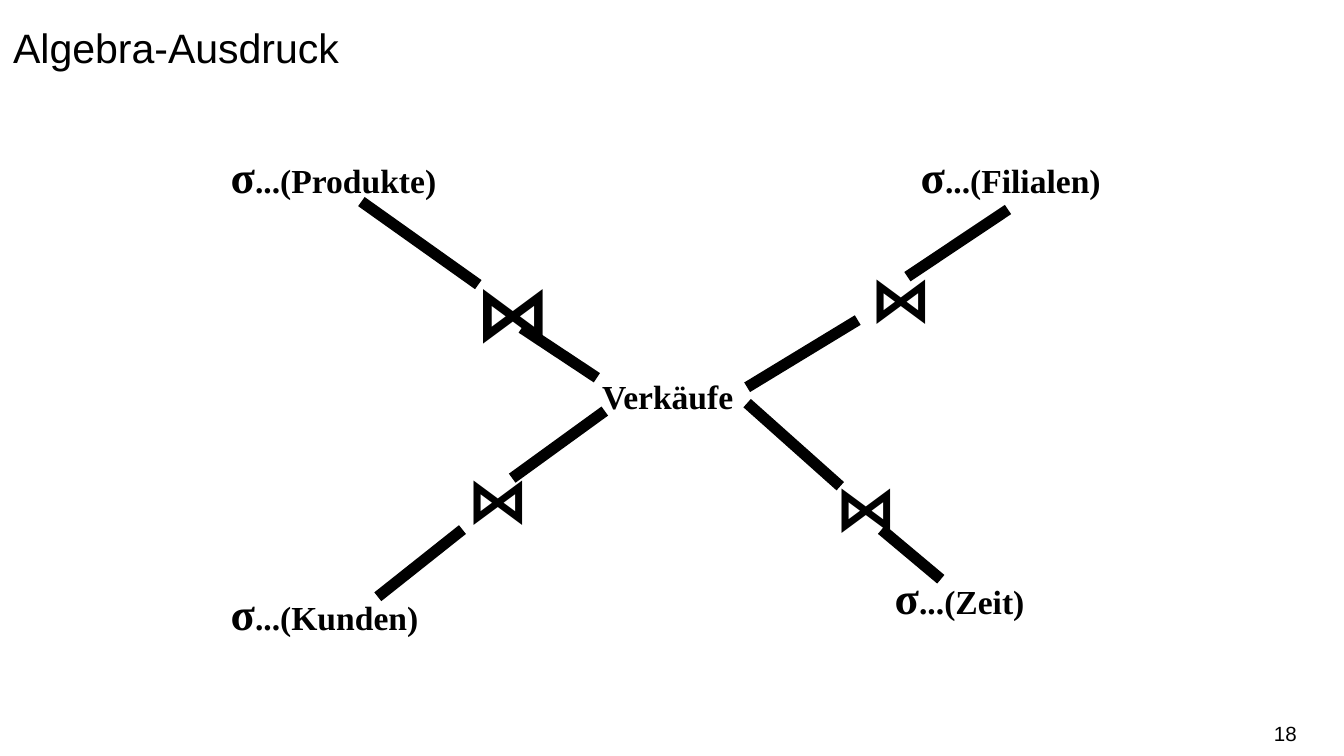
from dataclasses import dataclass

import pptx
import pptx.dml.color
import pptx.enum.shapes
import pptx.enum.text
import pptx.oxml.ns
import pptx.util
from lxml import etree
from pptx.util import Cm

INK = "000000"
SERIF = "Times New Roman"
SANS = "Arial"
ALIGN = pptx.enum.text.PP_ALIGN
ANCHOR = pptx.enum.text.MSO_ANCHOR


@dataclass
class Run:
    text: str
    size: float
    font: str = SERIF
    bold: bool = True


@dataclass
class Label:
    left: float
    top: float
    width: float
    height: float
    runs: list[Run]


@dataclass
class Edge:
    start: tuple[float, float]
    end: tuple[float, float]


def color(hex_code: str) -> pptx.dml.color.RGBColor:
    return pptx.dml.color.RGBColor.from_string(hex_code)


def draw_label(slide, label: Label, align=ALIGN.LEFT, **frame_format) -> None:
    box = slide.shapes.add_textbox(
        Cm(label.left), Cm(label.top), Cm(label.width), Cm(label.height)
    )
    frame = box.text_frame
    for name, value in {"word_wrap": True, **frame_format}.items():
        setattr(frame, name, value)
    paragraph = frame.paragraphs[0]
    paragraph.alignment = align
    for part in label.runs:
        run = paragraph.add_run()
        run.text = part.text
        font_format = {
            "name": part.font,
            "size": pptx.util.Pt(part.size),
            "bold": part.bold,
        }
        for name, value in font_format.items():
            setattr(run.font, name, value)
        run.font.color.rgb = color(INK)


def draw_edge(slide, edge: Edge) -> None:
    line = slide.shapes.add_connector(
        pptx.enum.shapes.MSO_CONNECTOR.STRAIGHT,
        *map(Cm, edge.start),
        *map(Cm, edge.end),
    )
    line.line.color.rgb = color(INK)
    line.line.width = pptx.util.Pt(6)
    etree.SubElement(line._element.spPr, pptx.oxml.ns.qn("a:effectLst"))


def selection(left: float, top: float, width: float, relation: str) -> Label:
    runs = [Run("σ", 24), Run(f"...({relation})", 18)]
    return Label(left, top, width, 1.27, runs)


def join(left: float, top: float, width: float, height: float, size: float) -> Label:
    return Label(left, top, width, height, [Run("⋈", size, SANS)])


TITLE = Label(0, 0, 25.4, 2.39, [Run("Algebra-Ausdruck", 22, SANS, False)])
PAGE_NUMBER = Label(18.82, 13.49, 5.69, 0.76, [Run("18", 11, SANS, False)])

EXPRESSION = [
    Label(11.13, 6.99, 3.18, 1.02, [Run("Verkäufe", 18)]),
    selection(17.15, 2.69, 4.11, "Filialen"),
    selection(16.66, 10.64, 4.11, "Zeit"),
    selection(4.11, 10.95, 4.11, "Kunden"),
    selection(4.11, 2.69, 4.6, "Produkte"),
    join(8.74, 4.88, 2.06, 1.98, 40.5),
    join(8.59, 8.59, 1.42, 1.68, 33),
    join(15.54, 8.74, 1.27, 1.68, 33),
    join(16.21, 4.78, 1.27, 1.68, 33),
]

EDGES = [
    Edge((6.83, 3.81), (9.04, 5.38)),
    Edge((9.86, 6.2), (11.28, 7.14)),
    Edge((11.43, 7.77), (9.68, 9.04)),
    Edge((8.74, 10.01), (7.14, 11.28)),
    Edge((19.05, 3.96), (17.15, 5.23)),
    Edge((16.21, 6.05), (14.12, 7.32)),
    Edge((14.12, 7.62), (15.88, 9.19)),
    Edge((16.66, 10.01), (17.78, 10.95)),
]


def main() -> None:
    deck = pptx.Presentation()
    deck.slide_width, deck.slide_height = Cm(25.4), Cm(14.29)
    slide = deck.slides.add_slide(deck.slide_layouts[6])
    draw_label(slide, TITLE, margin_top=Cm(0.43))
    for label in EXPRESSION:
        draw_label(slide, label)
    for edge in EDGES:
        draw_edge(slide, edge)
    draw_label(
        slide,
        PAGE_NUMBER,
        ALIGN.RIGHT,
        vertical_anchor=ANCHOR.MIDDLE,
        margin_left=0,
        margin_right=0,
    )
    deck.save("out.pptx")


if __name__ == "__main__":
    main()
